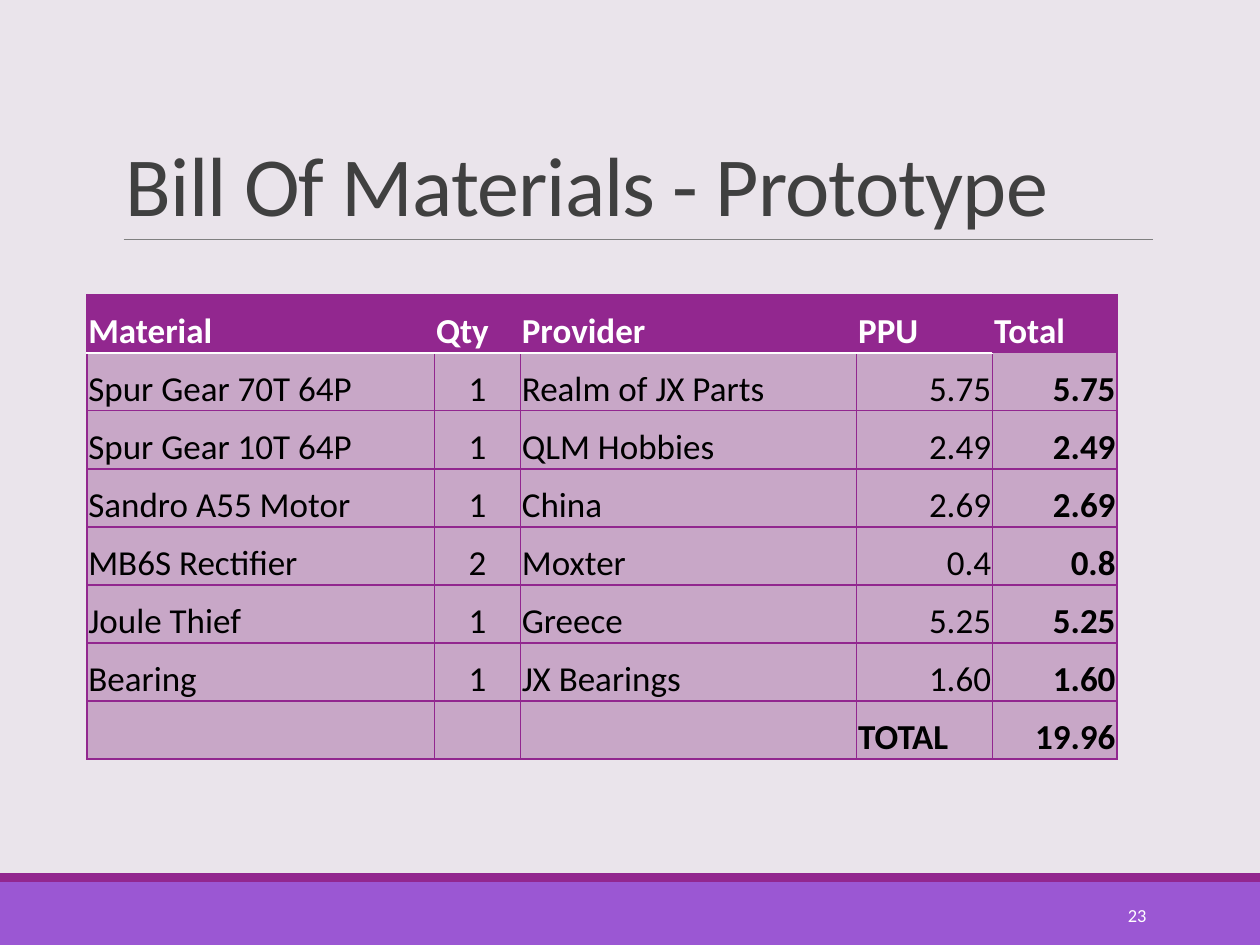
from lxml.etree import SubElement
from pptx import Presentation
from pptx.dml.color import RGBColor
from pptx.enum.shapes import MSO_CONNECTOR, MSO_SHAPE
from pptx.enum.text import MSO_ANCHOR, PP_ALIGN
from pptx.oxml.ns import qn
from pptx.util import Cm, Pt

BACKGROUND = RGBColor(0xEA, 0xE4, 0xEB)
PURPLE = RGBColor(0x92, 0x27, 0x8F)
VIOLET = RGBColor(0x9B, 0x57, 0xD3)
MAUVE = RGBColor(0xC8, 0xA7, 0xC7)
GRAY = RGBColor(0x80, 0x80, 0x80)
DARK_GRAY = RGBColor(0x40, 0x40, 0x40)
WHITE = RGBColor(0xFF, 0xFF, 0xFF)
BLACK = RGBColor(0, 0, 0)
FONT = "Calibri"

COLUMN_WIDTHS = (7.01, 1.73, 6.78, 2.74, 2.51)
ROW_HEIGHT = 1.17
ALIGNMENTS = (PP_ALIGN.LEFT, PP_ALIGN.CENTER, PP_ALIGN.LEFT, PP_ALIGN.RIGHT, PP_ALIGN.RIGHT)
ROWS = (
    ("Material", "Qty", "Provider", "PPU", "Total"),
    ("Spur Gear 70T 64P", "1", "Realm of JX Parts", "5.75", "5.75"),
    ("Spur Gear 10T 64P", "1", "QLM Hobbies", "2.49", "2.49"),
    ("Sandro A55 Motor", "1", "China", "2.69", "2.69"),
    ("MB6S Rectifier", "2", "Moxter", "0.4", "0.8"),
    ("Joule Thief", "1", "Greece", "5.25", "5.25"),
    ("Bearing", "1", "JX Bearings", "1.60", "1.60"),
    ("", "", "", "TOTAL", "19.96"),
)


def style_paragraph(paragraph, size, color, bold=False, alignment=PP_ALIGN.LEFT):
    paragraph.alignment = alignment
    font = paragraph.font
    font.name = FONT
    font.size = Pt(size)
    font.bold = bold
    font.color.rgb = color


def add_band(slide, top, height, color):
    shape = slide.shapes.add_shape(MSO_SHAPE.RECTANGLE, Cm(0), Cm(top), Cm(25.4), Cm(height))
    shape.shadow.inherit = False
    shape.fill.solid()
    shape.fill.fore_color.rgb = color
    shape.line.fill.background()


def add_rule(slide, left, right, top):
    line = slide.shapes.add_connector(MSO_CONNECTOR.STRAIGHT, Cm(left), Cm(top), Cm(right), Cm(top))
    line.line.color.rgb = GRAY
    line.line.width = Pt(0.5)
    SubElement(line._element.spPr, qn("a:effectLst"))


def add_text(slide, text, left, top, width, height, anchor):
    box = slide.shapes.add_textbox(Cm(left), Cm(top), Cm(width), Cm(height))
    frame = box.text_frame
    frame.word_wrap = True
    frame.vertical_anchor = anchor
    frame.text = text
    return frame.paragraphs[0]


def set_border(cell, side, color, width):
    properties = cell._tc.get_or_add_tcPr()
    line = SubElement(properties, qn(f"a:ln{side}"), w=str(Pt(width)))
    fill = SubElement(line, qn("a:solidFill"))
    SubElement(fill, qn("a:srgbClr"), val=str(color))


def fill_cell(cell, text, row, column):
    is_header = row == 0
    is_total_row = row == len(ROWS) - 1
    is_last_column = column == len(COLUMN_WIDTHS) - 1
    is_label = is_header or text == "TOTAL"

    cell.margin_left = cell.margin_right = cell.margin_top = Cm(0.03)
    cell.margin_bottom = Cm(0)
    cell.vertical_anchor = MSO_ANCHOR.BOTTOM
    cell.text = text
    style_paragraph(
        cell.text_frame.paragraphs[0],
        20,
        WHITE if is_header else BLACK,
        is_header or is_total_row or is_last_column,
        PP_ALIGN.LEFT if is_label else ALIGNMENTS[column],
    )

    white_side = {0: "B", 1: "T"}.get(row) if not is_last_column else None
    for side in "LRTB":
        if side == white_side:
            set_border(cell, side, WHITE, 1.25)
        else:
            set_border(cell, side, PURPLE, 1)
    cell.fill.solid()
    cell.fill.fore_color.rgb = PURPLE if is_header else MAUVE


def add_materials_table(slide):
    table = slide.shapes.add_table(
        len(ROWS), len(COLUMN_WIDTHS), Cm(1.75), Cm(5.94),
        Cm(sum(COLUMN_WIDTHS)), Cm(ROW_HEIGHT * len(ROWS)),
    ).table
    for column, width in enumerate(COLUMN_WIDTHS):
        table.columns[column].width = Cm(width)
    for row, values in enumerate(ROWS):
        table.rows[row].height = Cm(ROW_HEIGHT)
        for column, text in enumerate(values):
            fill_cell(table.cell(row, column), text, row, column)


def main():
    presentation = Presentation()
    presentation.slide_width = Cm(25.4)
    presentation.slide_height = Cm(19.05)
    slide = presentation.slides.add_slide(presentation.slide_layouts[6])
    slide.background.fill.solid()
    slide.background.fill.fore_color.rgb = BACKGROUND

    add_band(slide, 17.78, 1.27, VIOLET)
    add_band(slide, 17.6, 0.18, PURPLE)
    add_rule(slide, 2.49, 23.24, 4.83)

    title = add_text(slide, "Bill Of Materials - Prototype", 2.29, 0.79, 20.96, 4.04, MSO_ANCHOR.BOTTOM)
    style_paragraph(title, 48, DARK_GRAY)
    title.line_spacing = 0.85
    title.runs[0]._r.get_or_add_rPr().set("spc", "-50")

    add_materials_table(slide)

    number = add_text(slide, "23", 20.62, 17.93, 2.74, 1.02, MSO_ANCHOR.MIDDLE)
    style_paragraph(number, 10.5, WHITE, alignment=PP_ALIGN.RIGHT)

    presentation.save("out.pptx")


if __name__ == "__main__":
    main()
